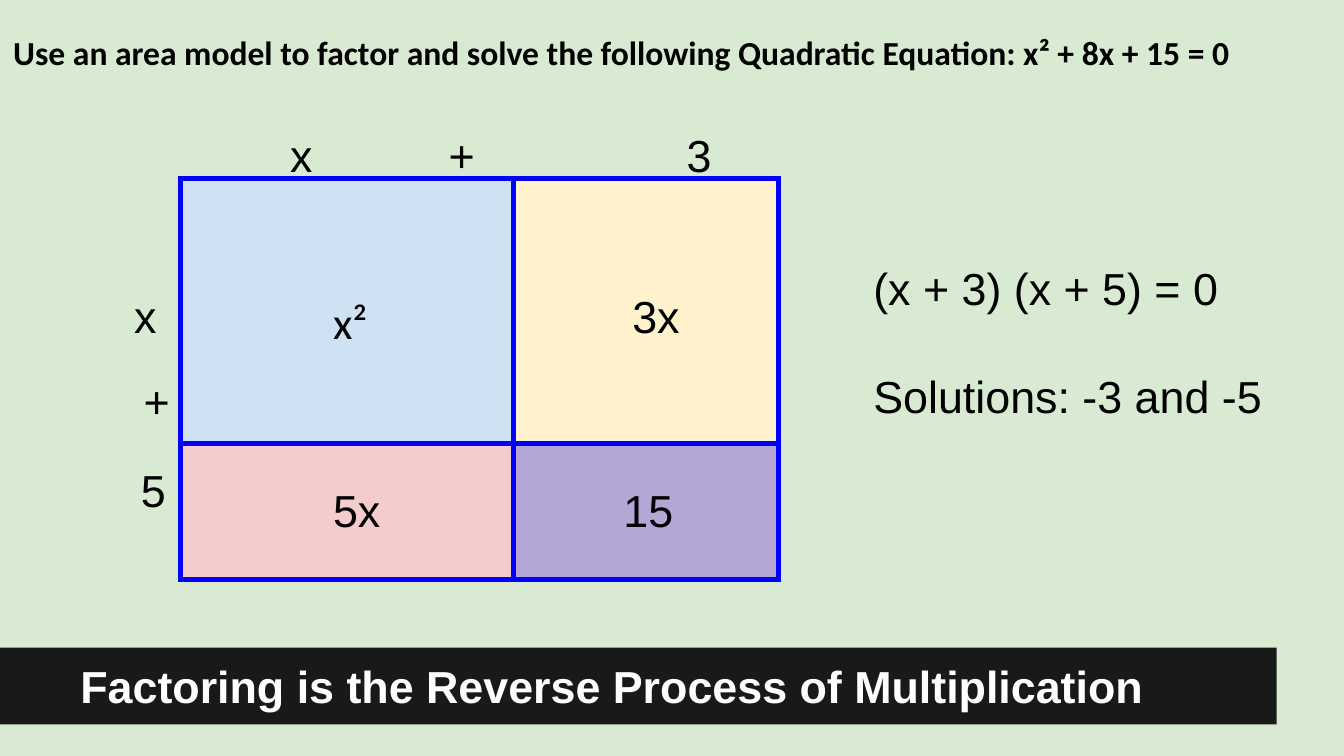
from pptx import Presentation
from pptx.dml.color import RGBColor
from pptx.enum.shapes import MSO_SHAPE
from pptx.enum.text import MSO_ANCHOR, PP_ALIGN
from pptx.oxml import parse_xml
from pptx.oxml.ns import nsdecls
from pptx.util import Inches, Pt

THEME = {
    "background": "D9EAD3", "banner": "191919", "banner_text": "FFFFFF",
    "text": "000000", "border": "0000FF", "border_width": 3,
    "body_font": "Arial", "math_font": "Calibri",
    "body_size": 24, "question_size": 18,
}
WIDTH = 10
HEIGHT = WIDTH * 9 / 16

QUESTION = ("Use an area model to factor and solve the following "
            "Quadratic Equation: x² + 8x + 15 = 0")
BANNER = "Factoring is the Reverse Process of Multiplication"
ANSWER = ["(x + 3) (x + 5) = 0", "Solutions: -3 and -5"]
TOP_FACTOR = ["x", "+", "3"]
TOP_FACTOR_TABS = [1.18, 2.95]
CELL_FILLS = [["CFE2F3", "FFF2CC"], ["F4CCCC", "B4A7D6"]]

GRID_LEFT, GRID_TOP = 1.34, 1.33
COLUMNS, ROWS = [2.48, 1.97], [1.97, 1.01]
BANNER_TOP, BANNER_WIDTH, BANNER_HEIGHT = 4.82, 0.95 * WIDTH, 0.57

# text, offset of its box from the grid's corner, box size, extra options
SIDE_FACTOR = [
    ("x", (-0.44, 0.68), (0.78, 0.67), {"anchor": MSO_ANCHOR.MIDDLE}),
    ("+", (-0.37, 1.35), (0.40, 0.42), {}),
    ("5", (-0.39, 2.02), (0.40, 0.59), {"anchor": MSO_ANCHOR.MIDDLE}),
]
PRODUCTS = [
    ("x²", (1.04, 0.76), (1.11, 0.82), {"font": THEME["math_font"]}),
    ("3x", (3.20, 0.72), (0.68, 0.59), {"align": PP_ALIGN.CENTER}),
    ("5x", (1.04, 2.16), (1.11, 0.67), {}),
    ("15", (3.20, 2.16), (0.68, 0.67), {}),
]


def color(name):
    return RGBColor.from_string(THEME[name])


def add_text(page, lines, left, top, width, height, font=THEME["body_font"],
             size=THEME["body_size"], ink="text", bold=False, align=None,
             anchor=MSO_ANCHOR.TOP, gap=0, tabs=()):
    box = page.shapes.add_textbox(*map(Inches, (left, top, width, height)))
    frame = box.text_frame
    frame.word_wrap = True
    frame.vertical_anchor = anchor
    frame.margin_left = frame.margin_right = Inches(0.1)
    frame.margin_top = frame.margin_bottom = Inches(0.1)
    for index, line in enumerate(lines):
        para = frame.add_paragraph() if index else frame.paragraphs[0]
        para.text = line
        para.alignment = align
        if index:
            para.space_before = Pt(gap)
        if tabs:
            stops = "".join(f'<a:tab pos="{Inches(stop)}" algn="l"/>' for stop in tabs)
            para._p.get_or_add_pPr().append(
                parse_xml(f'<a:tabLst {nsdecls("a")}>{stops}</a:tabLst>'))
        para.font.name = font
        para.font.size = Pt(size)
        para.font.bold = bold
        para.font.color.rgb = color(ink)


def style_cell(cell, fill):
    """Draw the four borders and fill the cell."""
    properties = cell._tc.get_or_add_tcPr()
    for side in ("lnL", "lnR", "lnT", "lnB"):
        properties.append(parse_xml(
            f'<a:{side} {nsdecls("a")} w="{Pt(THEME["border_width"])}">'
            f'<a:solidFill><a:srgbClr val="{THEME["border"]}"/></a:solidFill>'
            f'</a:{side}>'))
    cell.fill.solid()
    cell.fill.fore_color.rgb = RGBColor.from_string(fill)


def add_area_model(page):
    table = page.shapes.add_table(
        len(ROWS), len(COLUMNS), Inches(GRID_LEFT), Inches(GRID_TOP),
        Inches(sum(COLUMNS)), Inches(sum(ROWS))).table
    for column, width in zip(table.columns, COLUMNS):
        column.width = Inches(width)
    for row, height, fills in zip(table.rows, ROWS, CELL_FILLS):
        row.height = Inches(height)
        for cell, fill in zip(row.cells, fills):
            style_cell(cell, fill)

    add_text(page, ["\t".join(TOP_FACTOR)], GRID_LEFT + 0.72, GRID_TOP - 0.48,
             4.05, 0.42, tabs=TOP_FACTOR_TABS)
    for text, (across, down), size, options in SIDE_FACTOR + PRODUCTS:
        add_text(page, [text], GRID_LEFT + across, GRID_TOP + down, *size, **options)


def add_banner(page):
    bar = page.shapes.add_shape(
        MSO_SHAPE.RECTANGLE, 0, Inches(BANNER_TOP),
        Inches(BANNER_WIDTH), Inches(BANNER_HEIGHT))
    bar.shadow.inherit = False
    bar.fill.solid()
    bar.fill.fore_color.rgb = color("banner")
    bar.line.fill.background()
    add_text(page, [BANNER], 0.05 * WIDTH, BANNER_TOP, 0.9 * WIDTH, BANNER_HEIGHT,
             ink="banner_text", bold=True, anchor=MSO_ANCHOR.MIDDLE)


def main():
    deck = Presentation()
    deck.slide_width, deck.slide_height = Inches(WIDTH), Inches(HEIGHT)
    page = deck.slides.add_slide(deck.slide_layouts[6])
    page.background.fill.solid()
    page.background.fill.fore_color.rgb = color("background")

    add_banner(page)
    add_area_model(page)
    add_text(page, [QUESTION], 0, 0, 0.95 * WIDTH, 0.78, font=THEME["math_font"],
             size=THEME["question_size"], bold=True, anchor=MSO_ANCHOR.MIDDLE)
    add_text(page, ANSWER, 0.64 * WIDTH, 1.84, 3.26, 3.19, gap=29)
    deck.save("out.pptx")


if __name__ == "__main__":
    main()
